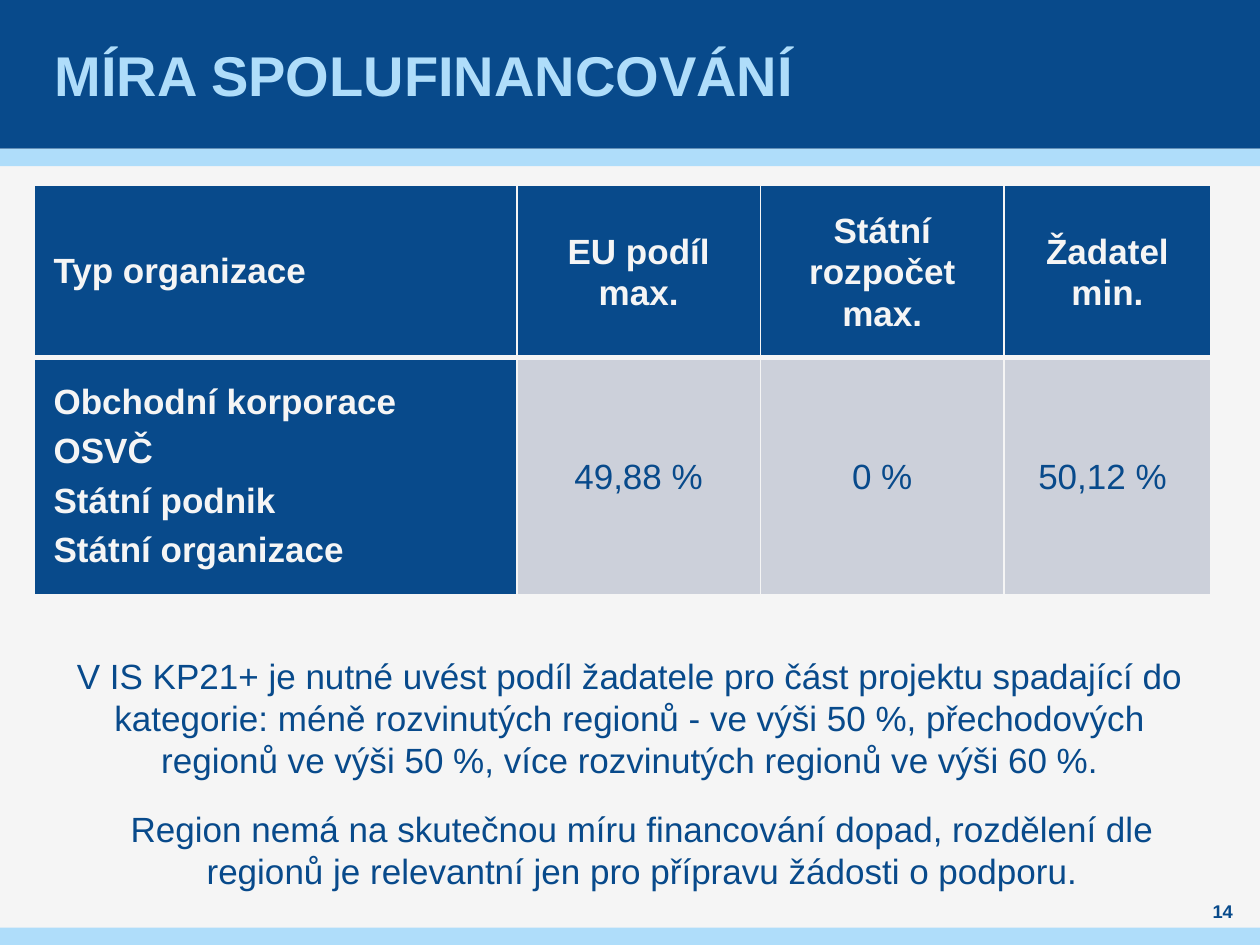
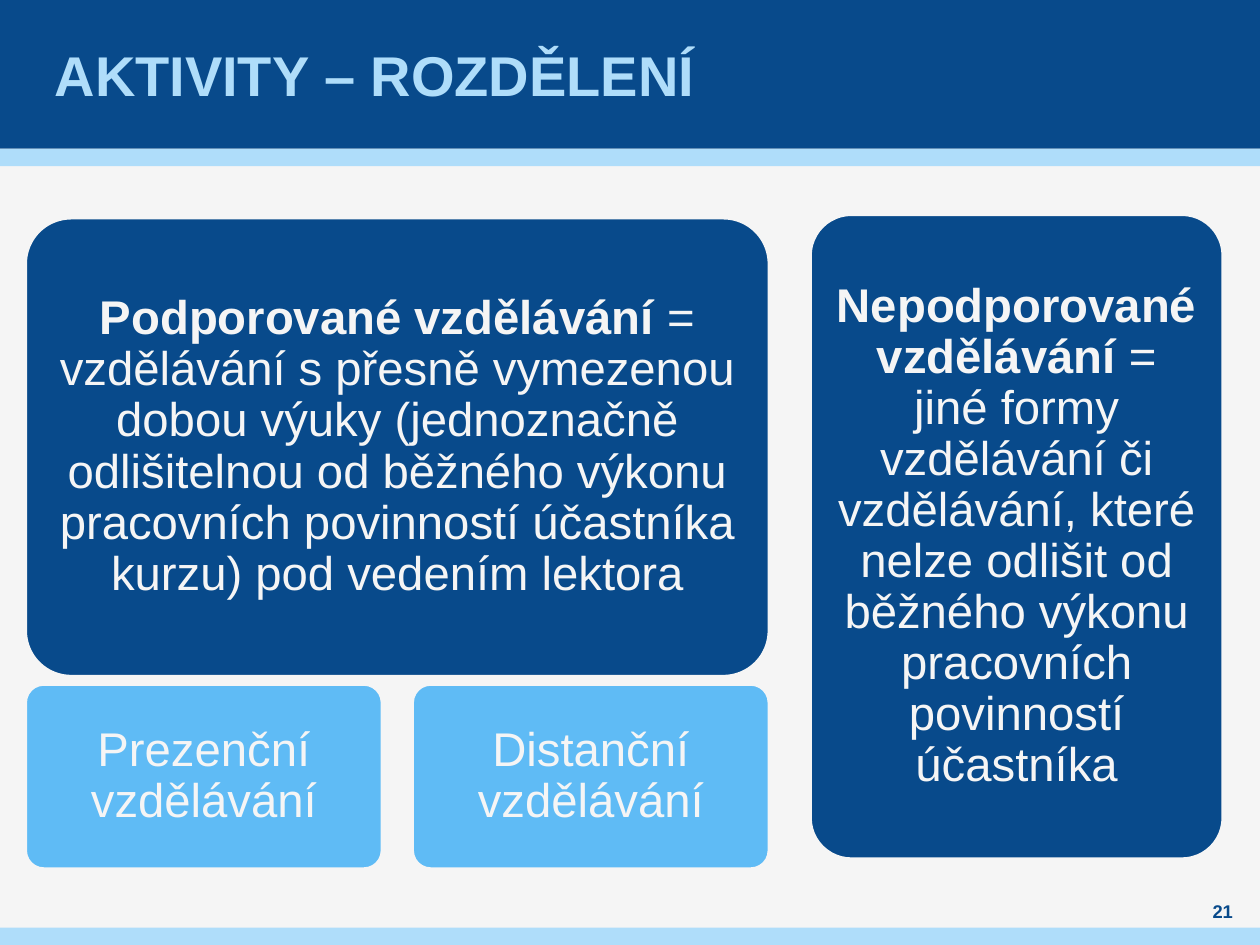
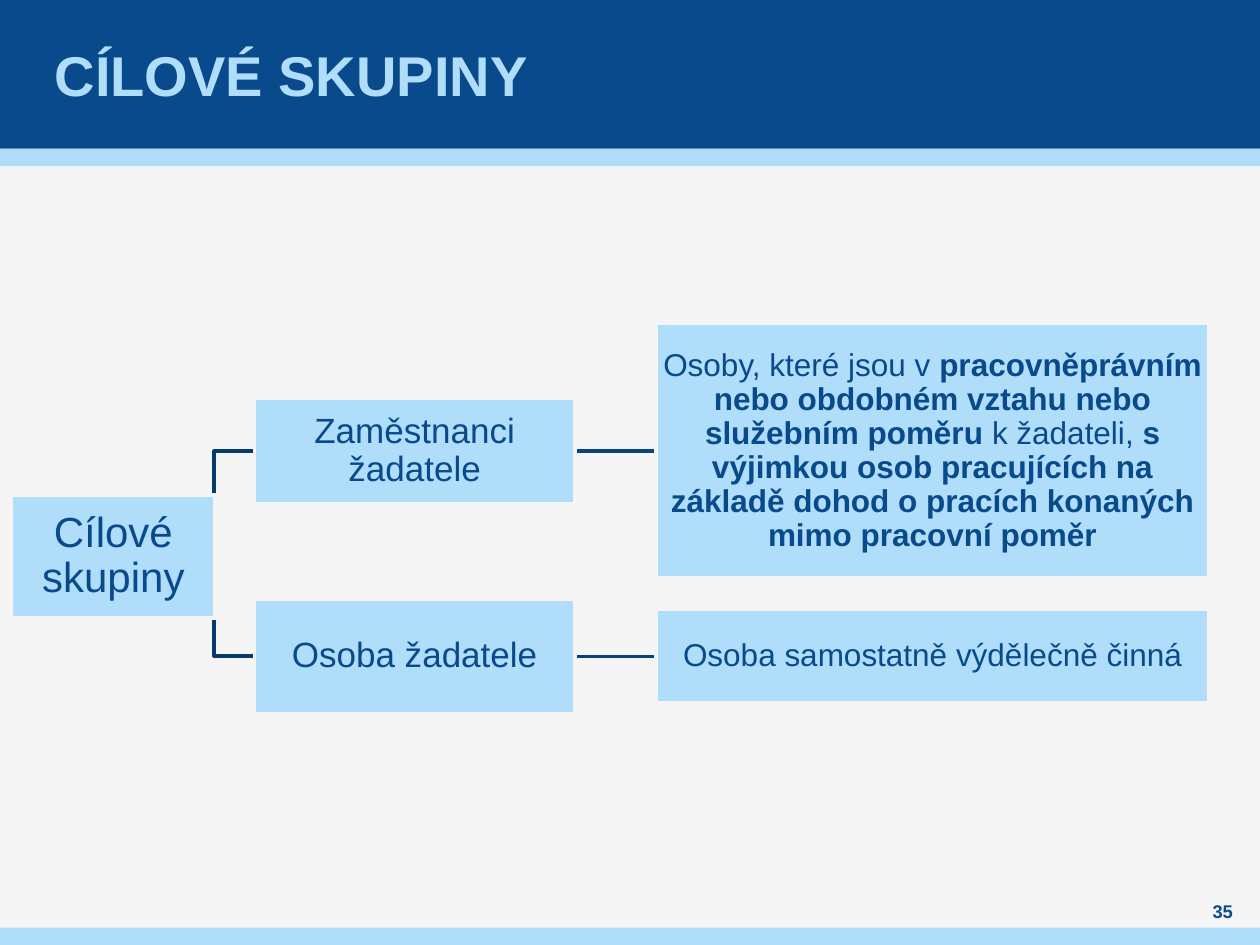
from typing import NamedTuple

from lxml import etree
from pptx import Presentation
from pptx.dml.color import RGBColor
from pptx.enum.shapes import MSO_CONNECTOR, MSO_SHAPE
from pptx.enum.text import MSO_ANCHOR, MSO_AUTO_SIZE, PP_ALIGN
from pptx.oxml.ns import qn
from pptx.util import Cm, Pt

RECT, ROUNDED = MSO_SHAPE.RECTANGLE, MSO_SHAPE.ROUNDED_RECTANGLE
STRAIGHT, ELBOW = MSO_CONNECTOR.STRAIGHT, MSO_CONNECTOR.ELBOW
LEFT, CENTER = PP_ALIGN.LEFT, PP_ALIGN.CENTER
MIDDLE, TOP = MSO_ANCHOR.MIDDLE, MSO_ANCHOR.TOP

FONT = "Arial"
COLORS = {
    "paper": "F5F5F5",
    "navy": "084A8B",
    "pale": "AFDDFA",
    "sky": "5FBBF5",
    "cell": "CCD0DA",
    "trunk": "063B6F",
    "branch": "07437E",
}
SLIDE_WIDTH, SLIDE_HEIGHT = 25.4, 19.05
HEADER_HEIGHT, STRIPE_HEIGHT = 3.0, 0.35
TITLE_ONLY = 5


class Box(NamedTuple):
    """A region of the slide, in centimetres."""
    left: float
    top: float
    width: float
    height: float

    def lengths(self):
        return [Cm(value) for value in self]


HEADER = Box(0, 0, SLIDE_WIDTH, HEADER_HEIGHT)
STRIPES = [
    Box(0, top, SLIDE_WIDTH, STRIPE_HEIGHT)
    for top in (HEADER_HEIGHT, SLIDE_HEIGHT - STRIPE_HEIGHT)
]
TITLE = Box(1, 0, 23.4, HEADER_HEIGHT)
PAGE_NUMBER = Box(24, 18.11, 1.3, 0.5)


def rgb(name):
    return RGBColor.from_string(COLORS[name])


# Text
def set_margins(frame, horizontal, vertical):
    frame.margin_left = frame.margin_right = Cm(horizontal)
    frame.margin_top = frame.margin_bottom = Cm(vertical)


def format_runs(paragraph, size, color, bold=None, align=CENTER):
    paragraph.alignment = align
    for run in paragraph.runs:
        run.font.name = FONT
        run.font.size = Pt(size)
        run.font.color.rgb = rgb(color)
        if bold is not None:
            run.font.bold = bold


def add_text(slide, box, text, size, bold=False, anchor=TOP, margins=(0.25, 0.13)):
    frame = slide.shapes.add_textbox(*box.lengths()).text_frame
    frame.word_wrap = True
    frame.vertical_anchor = anchor
    set_margins(frame, *margins)
    frame.text = text
    format_runs(frame.paragraphs[0], size, "navy", bold)


# Shapes
def add_panel(slide, box, kind, fill, outline=None):
    panel = slide.shapes.add_shape(kind, *box.lengths())
    panel.shadow.inherit = False
    panel.fill.solid()
    panel.fill.fore_color.rgb = rgb(fill)
    if outline:
        panel.line.color.rgb = rgb(outline)
        panel.line.width = Pt(2)
    else:
        panel.line.fill.background()
    return panel


def add_card(slide, box, kind, fill, parts, size, color, margin):
    """Outlined panel whose text is a list of (text, bold) parts."""
    card = add_panel(slide, box, kind, fill, "paper")
    if kind == ROUNDED:
        card.adjustments[0] = 0.1
    frame = card.text_frame
    frame.word_wrap = True
    frame.vertical_anchor = MIDDLE
    set_margins(frame, margin, margin)
    paragraph = frame.paragraphs[0]
    paragraph.line_spacing = 0.9
    for text, bold in parts:
        run = paragraph.add_run()
        run.text = text
        run.font.bold = bold
    format_runs(paragraph, size, color)


def add_link(slide, kind, start, end, color):
    link = slide.shapes.add_connector(kind, *[Cm(v) for v in (*start, *end)])
    link.line.color.rgb = rgb(color)
    link.line.width = Pt(2)
    etree.SubElement(link.element.spPr, qn("a:effectLst"))


# Shared frame
def move_bands_to_layout(slide):
    """Draw the bands once and put them behind everything on the layout."""
    tree = slide.slide_layout.shapes.element
    bands = [add_panel(slide, HEADER, RECT, "navy")]
    bands += [add_panel(slide, stripe, RECT, "pale") for stripe in STRIPES]
    for position, band in enumerate(bands, start=2):
        tree.insert(position, band.element)


def add_titled_slide(prs, title_text, number):
    slide = prs.slides.add_slide(prs.slide_layouts[TITLE_ONLY])
    title = slide.shapes.title
    title.left, title.top, title.width, title.height = TITLE.lengths()
    frame = title.text_frame
    frame.text = title_text
    frame.word_wrap = True
    frame.auto_size = MSO_AUTO_SIZE.NONE
    frame.vertical_anchor = MIDDLE
    set_margins(frame, 0.1, 0)
    format_runs(frame.paragraphs[0], 32, "pale", True, LEFT)
    add_text(slide, PAGE_NUMBER, str(number), 10.5, True, MIDDLE, (0, 0))
    return slide


# Co-financing table
def set_borders(cell, bottom_width):
    properties = cell._tc.get_or_add_tcPr()
    widths = {"a:lnL": 1, "a:lnR": 1, "a:lnT": 1, "a:lnB": bottom_width}
    for position, (tag, width) in enumerate(widths.items()):
        border = etree.Element(qn(tag), w=str(Pt(width)))
        fill = etree.SubElement(border, qn("a:solidFill"))
        etree.SubElement(fill, qn("a:srgbClr"), val=COLORS["paper"])
        properties.insert(position, border)


def format_cell(cell, text, is_header, is_label):
    dark = is_header or is_label
    cell.fill.solid()
    cell.fill.fore_color.rgb = rgb("navy" if dark else "cell")
    set_borders(cell, 3 if is_header else 1)
    cell.vertical_anchor = MIDDLE
    set_margins(cell, 0.38, 0.38)
    cell.text_frame.text = text
    for paragraph in cell.text_frame.paragraphs:
        if is_label and not is_header:
            paragraph.space_before = paragraph.space_after = Pt(3)
        else:
            paragraph.space_after = Pt(8)
        if not is_label:
            paragraph.line_spacing = 1.07
        format_runs(paragraph, 20, "paper" if dark else "navy", dark,
                    LEFT if is_label else CENTER)


def add_rates_table(slide, box, rows, column_shares, row_shares):
    table = slide.shapes.add_table(
        len(rows), len(rows[0]), *box.lengths()).table
    table.first_row = table.horz_banding = False
    for column, share in zip(table.columns, column_shares):
        column.width = Cm(round(box.width * share, 2))
    for row, share in zip(table.rows, row_shares):
        row.height = Cm(round(box.height * share, 2))
    for r, texts in enumerate(rows):
        for c, text in enumerate(texts):
            format_cell(table.cell(r, c), text, r == 0, c == 0)


def add_rates_slide(prs):
    slide = add_titled_slide(prs, "MÍRA SPOLUFINANCOVÁNÍ", 14)
    organizations = ["Obchodní korporace", "OSVČ", "Státní podnik",
                     "Státní organizace"]
    rows = [
        ["Typ organizace", "EU podíl max.", "Státní rozpočet max.",
         "Žadatel min."],
        ["\n".join(organizations), "49,88 %", "0 %", "50,12 % "],
    ]
    add_rates_table(slide, Box(0.7, 3.73, 23.7, 7.8), rows,
                    (0.41, 0.207, 0.207, 0.176), (0.42, 0.58))
    add_text(slide, Box(1.25, 16.15, 23.4, 1.96),
             "Region nemá na skutečnou míru financování dopad, rozdělení dle "
             "regionů je relevantní jen pro přípravu žádosti o podporu.", 20)
    add_text(slide, Box(1, 13.06, 23.4, 2.82),
             "V IS KP21+ je nutné uvést podíl žadatele pro část projektu "
             "spadající do kategorie: méně rozvinutých regionů - ve výši 50 %, "
             "přechodových regionů ve výši 50 %, více rozvinutých regionů ve "
             "výši 60 %.", 20)
    return slide


# Division of activities
def add_activity_cards(slide, box, supported, forms, unsupported):
    supported_width, supported_height = 15, 9.25
    form_gap, form_height = 0.6, 3.73
    unsupported_width = 8.33
    top = box.top + 0.07

    def add_activity(card_box, fill, parts):
        add_card(slide, card_box, ROUNDED, fill, parts, 27, "paper", 0.28)

    add_activity(Box(box.left, top, supported_width, supported_height),
                 "navy", supported)
    form_width = (supported_width - form_gap * (len(forms) - 1)) / len(forms)
    for i, form in enumerate(forms):
        left = box.left + i * (form_width + form_gap)
        form_top = box.top + box.height - form_height
        add_activity(Box(left, form_top, form_width, form_height),
                     "sky", [(form, False)])
    add_activity(Box(box.left + box.width - unsupported_width, box.top,
                     unsupported_width, 13), "navy", unsupported)


def add_activities_slide(prs):
    slide = add_titled_slide(prs, "AKTIVITY – ROZDĚLENÍ", 21)
    supported = [
        ("Podporované vzdělávání ", True),
        ("= vzdělávání s přesně vymezenou dobou výuky (jednoznačně "
         "odlišitelnou od běžného výkonu pracovních povinností účastníka "
         "kurzu) pod vedením lektora", False),
    ]
    unsupported = [
        ("Nepodporované vzdělávání ", True),
        ("= jiné formy vzdělávání či vzdělávání, které nelze odlišit od "
         "běžného výkonu pracovních povinností účastníka", False),
    ]
    add_activity_cards(slide, Box(0.51, 4.32, 24.15, 13.2), supported,
                       ["Prezenční vzdělávání", "Distanční vzdělávání"],
                       unsupported)


# Tree of target groups
def add_group_tree(slide, box, root, branches):
    root_width, root_height, root_middle = 4.11, 2.49, box.top + 4.69
    group_left, group_width = box.left + 4.9, 6.46
    detail_left = box.left + 13
    detail_width = box.left + box.width - detail_left
    trunk_start = (box.left + 3.28, root_middle)

    def add_node(left, middle, width, height, parts, size, margin=0.03):
        add_card(slide, Box(left, middle - height / 2, width, height), RECT,
                 "pale", parts, size, "navy", margin)

    # Links lie behind the nodes
    for offset, *_ in branches:
        middle = box.top + offset
        add_link(slide, STRAIGHT, (group_left + group_width, middle),
                 (detail_left, middle), "branch")
        add_link(slide, ELBOW, trunk_start, (group_left, middle), "trunk")

    add_node(box.left, root_middle, root_width, root_height,
             [(root, False)], 24, 0.05)
    for offset, group, group_height, detail, detail_height in branches:
        middle = box.top + offset
        add_node(group_left, middle, group_width, group_height,
                 [(group, False)], 20)
        add_node(detail_left, middle, detail_width, detail_height, detail, 18)


def add_groups_slide(prs):
    slide = add_titled_slide(prs, "CÍLOVÉ SKUPINY", 35)
    employees = [
        ("Osoby, které jsou v ", False),
        ("pracovněprávním nebo obdobném vztahu nebo služebním poměru", True),
        (" k žadateli, ", False),
        ("s výjimkou osob pracujících na základě dohod o pracích konaných "
         "mimo pracovní poměr", True),
    ]
    self_employed = [("Osoba samostatně výdělečně činná", False)]
    branches = [
        (2.56, "Zaměstnanci žadatele", 2.13, employees, 5.13),
        (6.7, "Osoba žadatele", 2.31, self_employed, 1.88),
    ]
    add_group_tree(slide, Box(0.23, 6.53, 24.14, 7.85), "Cílové skupiny",
                   branches)


def main():
    prs = Presentation()
    prs.slide_width, prs.slide_height = Cm(SLIDE_WIDTH), Cm(SLIDE_HEIGHT)
    background = prs.slide_master.background.fill
    background.solid()
    background.fore_color.rgb = rgb("paper")
    move_bands_to_layout(add_rates_slide(prs))
    add_activities_slide(prs)
    add_groups_slide(prs)
    prs.save("out.pptx")


if __name__ == "__main__":
    main()
